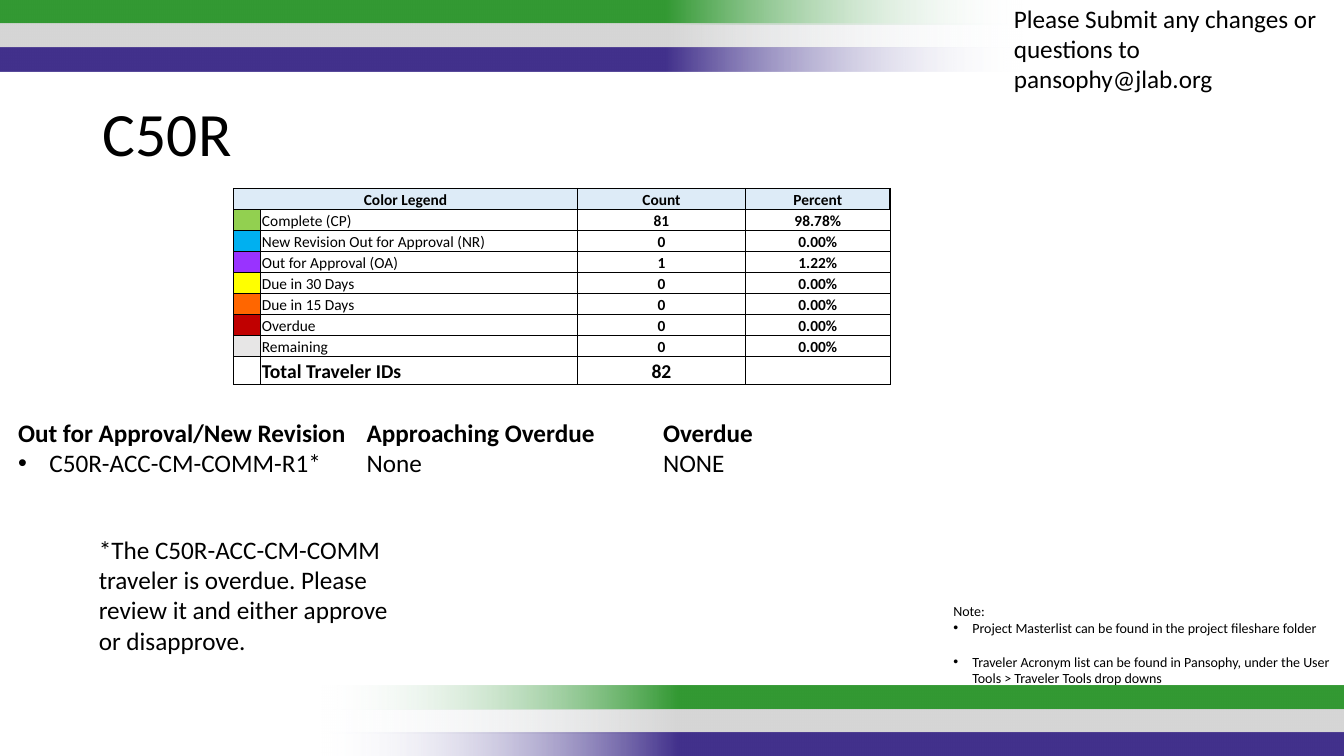
"""Builds the C50R traveler status slide."""
from dataclasses import dataclass

from lxml import etree
from pptx import Presentation
from pptx import util as u
from pptx.dml import color
from pptx.enum import shapes, text
from pptx.oxml import ns


@dataclass(frozen=True)
class Theme:
    font: str = "Calibri"
    black: str = "000000"
    fade: str = "F7FAFD"
    header: str = "DDEBF7"
    bands: tuple = ("339933", "D6D6D6", "42318C")
    title: int = 44
    body: int = 18
    total: int = 14
    table: int = 11
    note: int = 10


theme = Theme()


def style_font(font, size, bold=False):
    font.name = theme.font
    font.size = u.Pt(size)
    font.bold = bold
    font.color.rgb = color.RGBColor.from_string(theme.black)


def fill_box(box, place, lines, size):
    box.left, box.top, box.width, box.height = [u.Cm(length) for length in place]
    frame = box.text_frame
    frame.word_wrap = True
    frame.auto_size = text.MSO_AUTO_SIZE.NONE
    for index, (words, bold, indent, gap) in enumerate(lines):
        para = frame.paragraphs[0] if index == 0 else frame.add_paragraph()
        props = para._p.get_or_add_pPr()
        props.set("marL", str(u.Cm(indent)))
        props.set("indent", str(-u.Cm(indent)))
        if indent:
            etree.SubElement(props, ns.qn("a:buFont"), typeface="Arial")
            etree.SubElement(props, ns.qn("a:buChar"), char="•")
        else:
            etree.SubElement(props, ns.qn("a:buNone"))
        para.alignment = text.PP_ALIGN.LEFT
        para.space_before = u.Pt(gap)
        span = para.add_run()
        span.text = words
        style_font(span.font, size, bold)


deck = Presentation()
deck.slide_width, deck.slide_height = u.Cm(33.87), u.Cm(19.05)
page = deck.slides.add_slide(deck.slide_layouts[3])
title, approval, note = page.placeholders

for left, top, turn in ((-0.03, 0, 180), (8.07, 17.27, 0)):
    for row, shade in enumerate(theme.bands):
        band = page.shapes.add_shape(
            shapes.MSO_SHAPE.RECTANGLE,
            u.Cm(left), u.Cm(top + 0.6 * row), u.Cm(25.83), u.Cm(0.61))
        band.rotation = turn
        band.shadow.inherit = False
        band.line.fill.background()
        band.fill.gradient()
        band.fill.gradient_angle = 0
        stops = band._element.spPr.find(ns.qn("a:gradFill")).find(ns.qn("a:gsLst"))
        for stop in list(stops):
            stops.remove(stop)
        for position, tint in ((0, theme.fade), (35, shade), (100, shade)):
            stop = etree.SubElement(stops, ns.qn("a:gs"), pos=str(position * 1000))
            value = etree.SubElement(stop, ns.qn("a:srgbClr"), val=tint)
            if position == 0:
                etree.SubElement(value, ns.qn("a:alpha"), val="0")

fill_box(title, (2.34, 2.18, 29.21, 2.51), [("C50R", False, 0, 0)], theme.title)
title.text_frame.vertical_anchor = text.MSO_ANCHOR.MIDDLE
title.text_frame.paragraphs[0].line_spacing = 0.9

legend = [
    (theme.header, "Color Legend", "Count", "Percent"),
    ("92D050", "Complete (CP)", "81", "98.78%"),
    ("00B0F0", "New Revision Out for Approval (NR)", "0", "0.00%"),
    ("9933FF", "Out for Approval (OA)", "1", "1.22%"),
    ("FFFF00", "Due in 30 Days", "0", "0.00%"),
    ("FF6600", "Due in 15 Days", "0", "0.00%"),
    ("C00000", "Overdue", "0", "0.00%"),
    ("E7E6E6", "Remaining", "0", "0.00%"),
    (None, "Total Traveler IDs", "82", ""),
]
last = len(legend) - 1
table = page.shapes.add_table(
    len(legend), 4, u.Cm(5.89), u.Cm(4.75), u.Cm(16.54), u.Cm(4.93)).table
table.first_row = table.horz_banding = False
for column, width in zip(table.columns, (0.68, 7.98, 4.24, 3.64)):
    column.width = u.Cm(width)
table.cell(0, 0).merge(table.cell(0, 1))

for row, (shade, label, count, percent) in enumerate(legend):
    table.rows[row].height = u.Cm(0.69 if row == last else 0.53)
    values = (label, "", count, percent) if row == 0 else ("", label, count, percent)
    for col, words in enumerate(values):
        cell = table.cell(row, col)
        cell.margin_left = cell.margin_right = cell.margin_top = u.Cm(0.03)
        cell.margin_bottom = 0
        cell.vertical_anchor = text.MSO_ANCHOR.BOTTOM
        props = cell._tc.get_or_add_tcPr()
        thick = {"L": col == 0, "R": row == 0 and col == 3,
                 "T": row == 0, "B": row == last}
        for side, heavy in thick.items():
            edge = etree.SubElement(
                props, ns.qn(f"a:ln{side}"), w=str(u.Pt(1 if heavy else 0.5)))
            paint = etree.SubElement(edge, ns.qn("a:solidFill"))
            etree.SubElement(paint, ns.qn("a:srgbClr"), val=theme.black)
        if shade and (row == 0 or col == 0):
            cell.fill.solid()
            cell.fill.fore_color.rgb = color.RGBColor.from_string(shade)
        else:
            cell.fill.background()
        para = cell.text_frame.paragraphs[0]
        if words:
            centred = row == 0 or col > 1
            para.alignment = text.PP_ALIGN.CENTER if centred else text.PP_ALIGN.LEFT
            span = para.add_run()
            span.text = words
            style_font(span.font, theme.total if row == last else theme.table,
                       centred or row == last)
        else:
            etree.SubElement(para._p, ns.qn("a:endParaRPr"), sz=str(theme.table * 100))

fill_box(approval, (0.2, 10.39, 8.85, 1.8),
         [("Out for Approval/New Revision", True, 0, 0),
          ("C50R-ACC-CM-COMM-R1*", False, 0.79, 0)], theme.body)
fill_box(note, (23.77, 15.06, 10.08, 2.39),
         [("Note:", False, 0, 0),
          ("Project Masterlist can be found in the project fileshare folder",
           False, 0.48, 0),
          ("Traveler Acronym list can be found in Pansophy, under the User "
           "Tools > Traveler Tools drop downs", False, 0.48, 12)], theme.note)

messages = [
    ((8.99, 10.39, 7.49, 1.8),
     [("Approaching Overdue", True, 0, 0), ("None", False, 0, 0)]),
    ((16.46, 10.39, 15.32, 2.57),
     [("Overdue", True, 0, 0), ("NONE", False, 0, 0)]),
    ((25.3, -0.05, 8.59, 2.57),
     [("Please Submit any changes or questions to pansophy@jlab.org", False, 0, 0)]),
    ((2.24, 13.34, 8.48, 3.33),
     [("*The C50R-ACC-CM-COMM traveler is overdue. Please review it and "
       "either approve or disapprove.", False, 0, 0)]),
]
for place, lines in messages:
    fill_box(page.shapes.add_textbox(0, 0, 0, 0), place, lines, theme.body)

deck.save("out.pptx")
